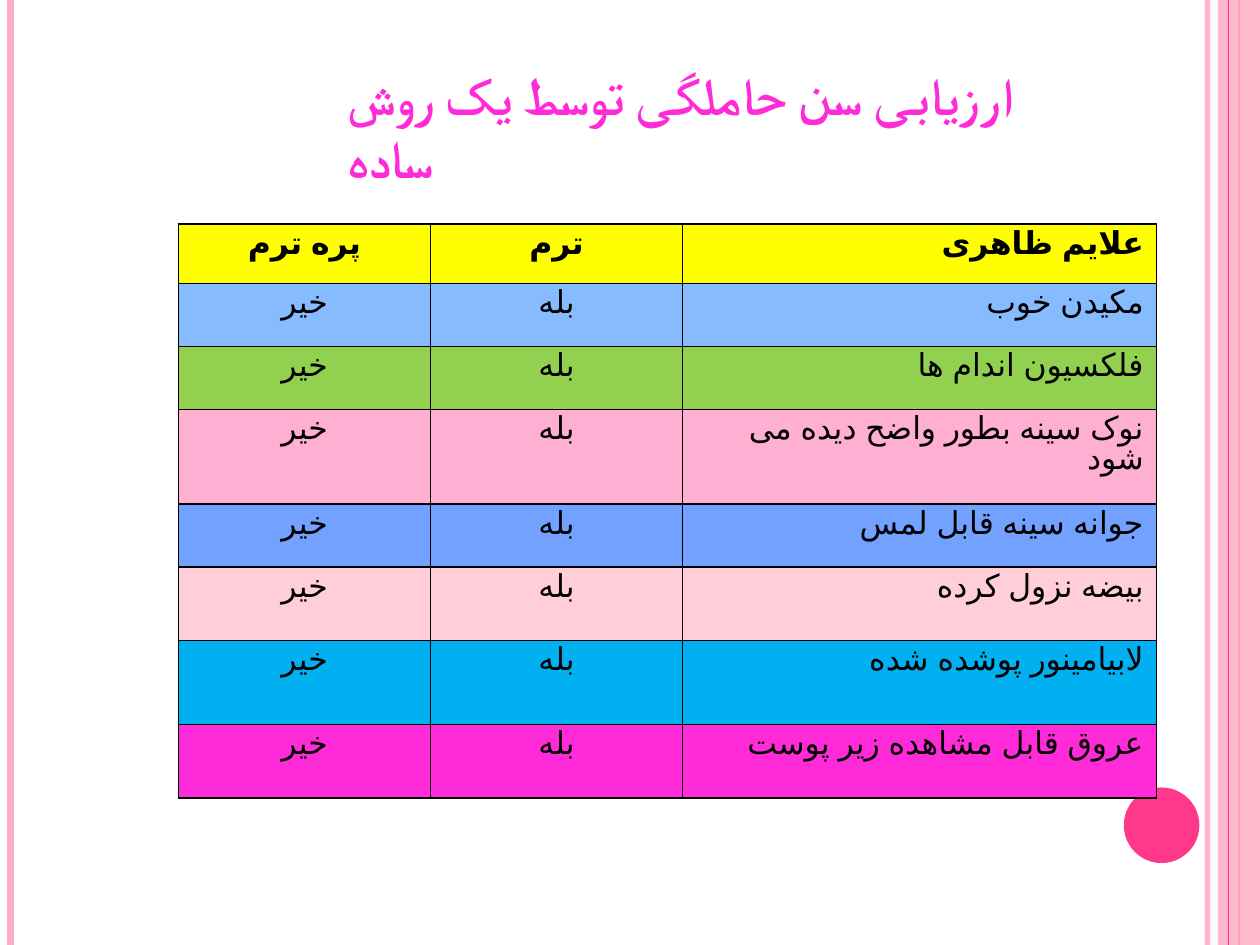
import dataclasses
import typing

import pptx
import pptx.dml.color
import pptx.enum.shapes
import pptx.enum.text
import pptx.oxml
import pptx.oxml.ns
import pptx.util

Pt = pptx.util.Pt
ALIGN = pptx.enum.text.PP_ALIGN
SHAPE = pptx.enum.shapes.MSO_SHAPE
NS = pptx.oxml.ns.nsdecls("a")
SLIDE_WIDTH, SLIDE_HEIGHT = 720, 540


@dataclasses.dataclass(frozen=True)
class Stripe:
    x: float
    color: str
    width: float
    opacity: int = 100


@dataclasses.dataclass(frozen=True)
class Panel:
    kind: typing.Any
    left: float
    top: float
    width: float
    height: float
    color: str
    opacity: int = 100


@dataclasses.dataclass(frozen=True)
class Sign:
    label: str
    height: float
    color: str
    term: str = "بله"
    preterm: str = "خیر"
    bold: bool = False


STRIPES = [
    Stripe(690, "FFAFC5", 3, 93),
    Stripe(6, "FFAFC5", 4.5),
    Stripe(708, "FF388C", 1.5),
    Stripe(702, "FF388C", 0.75),
]
PANELS = [
    Panel(SHAPE.RECTANGLE, 696, 0, 24, SLIDE_HEIGHT, "FFAFC5", 87),
    Panel(SHAPE.OVAL, 642.2, 450, 43.2, 43.2, "FF388C"),
]
SIGNS = [
    Sign("علایم ظاهری", 34, "FFFF00", "ترم", "پره ترم", True),
    Sign("مکیدن خوب", 36, "87BBFF"),
    Sign("فلکسیون اندام ها", 36, "92D050"),
    Sign("نوک سینه بطور واضح دیده می شود", 54, "FFAFD1"),
    Sign("جوانه سینه قابل لمس", 36, "72A1FF"),
    Sign("بیضه نزول کرده", 42, "FFCEDA"),
    Sign("لابیامینور پوشده شده", 48, "00B0F0"),
    Sign("عروق قابل مشاهده زیر پوست", 42, "FF2BD8"),
]
COLUMN_WIDTHS = [144, 144, 270.8]


def apply(target: typing.Any, values: dict) -> None:
    for key, value in values.items():
        setattr(target, key, value)


def paint(fill: typing.Any, color: str, opacity: int = 100) -> None:
    fill.solid()
    fill.fore_color.rgb = pptx.dml.color.RGBColor.from_string(color)
    if opacity < 100:
        alpha = pptx.oxml.parse_xml(f'<a:alpha {NS} val="{opacity * 1000}"/>')
        fill._xPr.find(".//" + pptx.oxml.ns.qn("a:srgbClr")).append(alpha)


def write(run: typing.Any, color: str, values: dict) -> None:
    apply(run.font, values)
    paint(run.font.fill, color)
    properties = run.font._element
    properties.set("lang", "fa-IR")
    properties.append(pptx.oxml.parse_xml(f'<a:cs {NS} typeface="{values["name"]}"/>'))


def draw_stripe(shapes: typing.Any, stripe: Stripe) -> None:
    line = shapes.add_connector(
        pptx.enum.shapes.MSO_CONNECTOR.STRAIGHT,
        Pt(stripe.x), Pt(0), Pt(stripe.x), Pt(SLIDE_HEIGHT),
    )
    line.line.width = Pt(stripe.width)
    paint(line.line.fill, stripe.color, stripe.opacity)
    line._element.spPr.append(pptx.oxml.parse_xml(f"<a:effectLst {NS}/>"))


def draw_panel(shapes: typing.Any, panel: Panel) -> None:
    shape = shapes.add_shape(
        panel.kind, Pt(panel.left), Pt(panel.top), Pt(panel.width), Pt(panel.height)
    )
    shape.shadow.inherit = False
    paint(shape.fill, panel.color, panel.opacity)
    shape.line.fill.background()


def draw_cell(cell: typing.Any, text: str, align: typing.Any, sign: Sign) -> None:
    paragraph = cell.text_frame.paragraphs[0]
    apply(paragraph, {"alignment": align, "line_spacing": 0.85})
    paragraph._p.get_or_add_pPr().set("rtl", "1")
    run = paragraph.add_run()
    run.text = text
    write(run, "000000", {"name": "Arial", "size": Pt(18), "bold": sign.bold})
    properties = cell._tc.get_or_add_tcPr()
    for side in ("lnL", "lnR", "lnT", "lnB"):
        properties.append(pptx.oxml.parse_xml(
            f'<a:{side} {NS} w="{Pt(1)}"><a:solidFill>'
            f'<a:srgbClr val="000000"/></a:solidFill></a:{side}>'
        ))
    paint(cell.fill, sign.color)


def draw_signs(shapes: typing.Any, signs: list[Sign]) -> None:
    table = shapes.add_table(
        len(signs), len(COLUMN_WIDTHS), Pt(102), Pt(128),
        Pt(sum(COLUMN_WIDTHS)), Pt(sum(sign.height for sign in signs)),
    ).table
    apply(table, {"first_row": False, "horz_banding": False})
    for column, width in zip(table.columns, COLUMN_WIDTHS):
        column.width = Pt(width)
    for row, sign in zip(table.rows, signs):
        row.height = Pt(sign.height)
        texts = (sign.preterm, sign.term, sign.label)
        aligns = (ALIGN.CENTER, ALIGN.CENTER, ALIGN.RIGHT)
        for cell, text, align in zip(row.cells, texts, aligns):
            draw_cell(cell, text, align, sign)


def draw_title(title: typing.Any, text: str) -> None:
    apply(title, {"left": Pt(191.5), "top": Pt(67.7), "width": Pt(445.7), "height": Pt(44)})
    apply(title.text_frame, {
        "word_wrap": True,
        "auto_size": pptx.enum.text.MSO_AUTO_SIZE.NONE,
        "vertical_anchor": pptx.enum.text.MSO_ANCHOR.BOTTOM,
    })
    paragraph = title.text_frame.paragraphs[0]
    paragraph.alignment = ALIGN.LEFT
    run = paragraph.add_run()
    run.text = text
    write(run, "FF2BD8", {"name": "Cambria", "size": Pt(30), "bold": True})
    run.font._element.set("cap", "small")


def main() -> None:
    presentation = pptx.Presentation()
    apply(presentation, {"slide_width": Pt(SLIDE_WIDTH), "slide_height": Pt(SLIDE_HEIGHT)})
    slide = presentation.slides.add_slide(presentation.slide_layouts[5])
    paint(slide.background.fill, "FFFFFF")
    for stripe in STRIPES[:3]:
        draw_stripe(slide.shapes, stripe)
    band, disc = PANELS
    draw_panel(slide.shapes, band)
    draw_stripe(slide.shapes, STRIPES[3])
    draw_panel(slide.shapes, disc)
    draw_signs(slide.shapes, SIGNS)
    draw_title(slide.shapes.title, "ارزیابی سن حاملگی توسط یک روش ساده")
    presentation.save("out.pptx")


if __name__ == "__main__":
    main()
